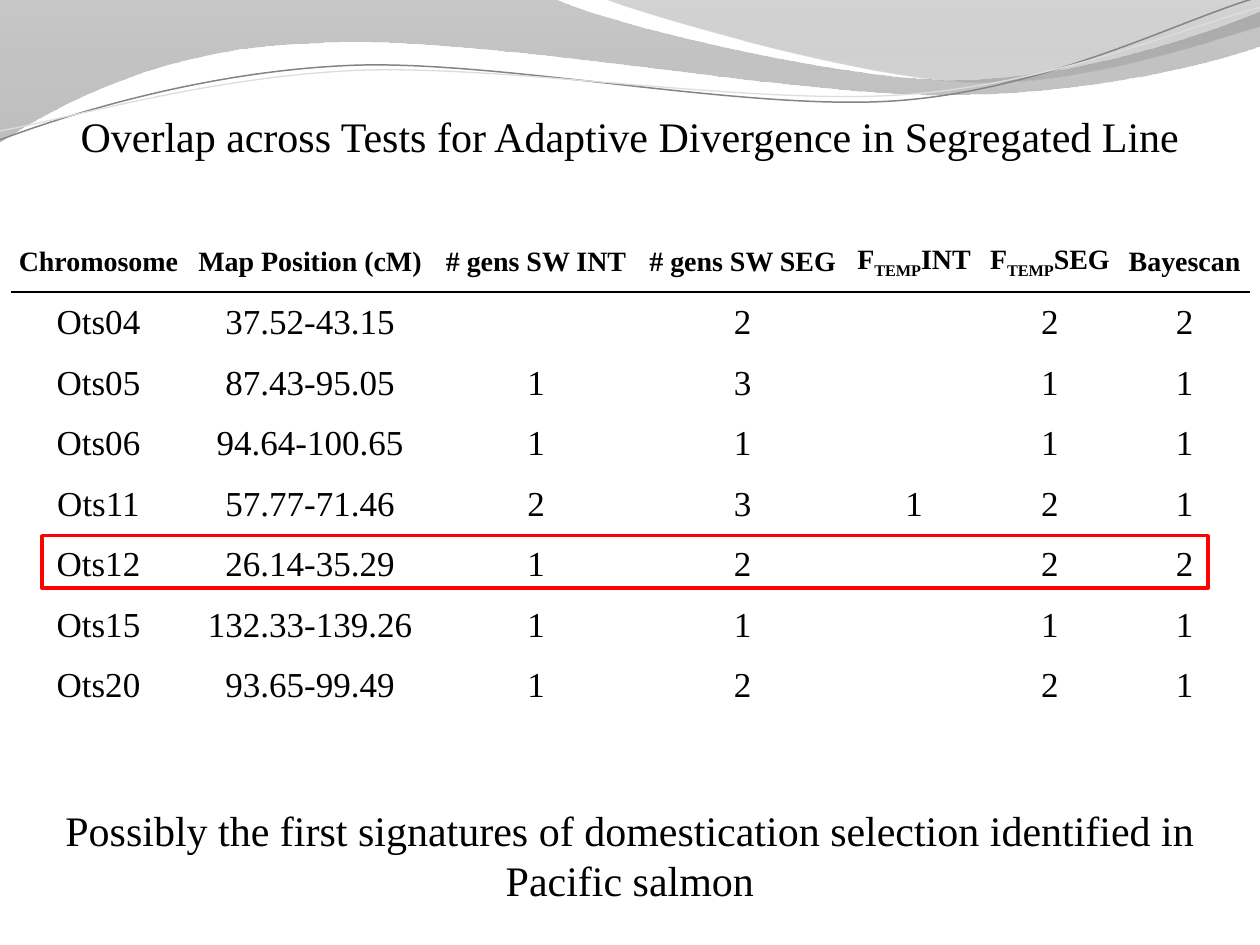
"""Build the slide on overlap across tests for adaptive divergence."""
from dataclasses import dataclass
from typing import Optional

from lxml.etree import SubElement
from pptx import Presentation
from pptx.dml.color import RGBColor
from pptx.enum.shapes import MSO_SHAPE
from pptx.enum.text import MSO_ANCHOR, MSO_AUTO_SIZE, PP_ALIGN
from pptx.oxml import parse_xml
from pptx.oxml.ns import nsdecls, qn
from pptx.util import Cm, Pt

FONT = "Times New Roman"
COLORS = {
    "text": "000000", "highlight": "FF0000",
    "wave_top": "848484", "wave_bottom": "888888",
    "crest_top": "6F6F6F", "crest_bottom": "9D9D9D",
    "dark_line": "848484", "light_line": "DDDDDD",
}
NO_STYLE = "{2D5ABB26-0587-4C30-8999-92F81FD0307C}"


@dataclass
class Stop:
    color: str
    position: float
    alpha: int


@dataclass
class Wave:
    """Outline in cm: a pair is a straight line, six numbers a Bezier curve."""
    start: tuple
    segments: list
    stops: Optional[tuple] = None
    line: Optional[str] = None
    width: float = 0


WAVES = [
    Wave((0, 0), [
        (11.18, -0.03),
        (12.09, 0.43, 16.87, 1.6, 19.25, 1.6),
        (21.67, 1.6, 24.33, 0.66, 25.4, 0.23),
        (25.43, 0.91),
        (24.97, 1.12, 22.1, 1.93, 18.95, 1.91),
        (15.8, 1.91, 9.7, 0.71, 6.53, 0.86),
        (3.28, 0.91, 1.17, 2.11, -0.03, 2.87),
    ], stops=(Stop("wave_top", 0, 45), Stop("wave_bottom", 1, 55))),
    Wave((12.17, -0.03), [
        (12.93, 0.28, 17.32, 1.57, 19.53, 1.65),
        (21.74, 1.75, 24.41, 0.81, 25.4, 0.53),
        (25.4, 0),
    ], stops=(Stop("crest_top", 0, 30), Stop("crest_bottom", 0.8, 45))),
    Wave((0, 2.82), [
        (1.22, 2.36, 4.01, 1.45, 7.04, 1.32),
        (10.03, 1.19, 15.06, 2.26, 18.11, 2.03),
        (21.16, 1.8, 23.83, 0.38, 25.35, -0.05),
    ], line="dark_line", width=0.85),
    Wave((0, 2.64), [
        (1.19, 2.44, 4.17, 1.55, 7.19, 1.42),
        (10.24, 1.3, 15.16, 2.13, 18.21, 1.91),
        (21.23, 1.7, 23.93, 0.53, 25.4, 0.15),
    ], line="light_line", width=0.75),
]

COL_WIDTHS = [3.53, 5, 4.11, 4.22, 2.69, 2.79, 2.64]
ROW_HEIGHT = 1.22
HEADER = ["Chromosome", "Map Position (cM)", "# gens SW INT", "# gens SW SEG",
          "F_TEMP_INT", "F_TEMP_SEG", "Bayescan"]
ROWS = [
    ["Ots04", "37.52-43.15", "", "2", "", "2", "2"],
    ["Ots05", "87.43-95.05", "1", "3", "", "1", "1"],
    ["Ots06", "94.64-100.65", "1", "1", "", "1", "1"],
    ["Ots11", "57.77-71.46", "2", "3", "1", "2", "1"],
    ["Ots12", "26.14-35.29", "1", "2", "", "2", "2"],
    ["Ots15", "132.33-139.26", "1", "1", "", "1", "1"],
    ["Ots20", "93.65-99.49", "1", "2", "", "2", "1"],
]


def rgb(name: str) -> RGBColor:
    return RGBColor.from_string(COLORS[name])


def bend_segments(sp, segments: list) -> None:
    lines = iter(list(sp.element.spPr.iter(qn("a:lnTo"))))
    for seg in segments:
        first = next(lines)
        if len(seg) == 6:
            first.tag = qn("a:cubicBezTo")
            for _ in range(2):
                line = next(lines)
                first.append(line[0])
                line.getparent().remove(line)


def add_wave(s, wave: Wave) -> None:
    points = [(Cm(seg[i]), Cm(seg[i + 1]))
              for seg in wave.segments for i in range(0, len(seg), 2)]
    builder = s.shapes.build_freeform(*map(Cm, wave.start))
    builder.add_line_segments(points, close=wave.stops is not None)
    sp = builder.convert_to_shape()
    bend_segments(sp, wave.segments)
    sp.shadow.inherit = False
    if wave.stops:
        sp.line.fill.background()
        sp.fill.gradient()
        sp.fill.gradient_angle = 270
        for grad_stop, stop in zip(sp.fill.gradient_stops, wave.stops):
            grad_stop.color.rgb = rgb(stop.color)
            grad_stop.position = stop.position
        colors = sp.element.spPr.iter(qn("a:srgbClr"))
        for clr, stop in zip(colors, wave.stops):
            SubElement(clr, qn("a:alpha"), val=str(stop.alpha * 1000))
    else:
        sp.fill.background()
        sp.line.color.rgb = rgb(wave.line)
        sp.line.width = Pt(wave.width)


def add_run(p, text: str, size: float, bold: bool = False, subscript: bool = False) -> None:
    r = p.add_run()
    r.text = text
    r.font.name, r.font.size, r.font.bold = FONT, Pt(size), bold
    r.font.color.rgb = rgb("text")
    if subscript:
        r._r.get_or_add_rPr().set("baseline", "-25000")


def add_bottom_border(cell) -> None:
    cell._tc.get_or_add_tcPr().insert(0, parse_xml(
        f'<a:lnB {nsdecls("a")} w="12700"><a:solidFill>'
        f'<a:srgbClr val="{COLORS["text"]}"/></a:solidFill></a:lnB>'))


def add_results(s) -> None:
    cells = [HEADER] + ROWS
    frame = s.shapes.add_table(len(cells), len(HEADER), Cm(0.22), Cm(4.67),
                               Cm(sum(COL_WIDTHS)), Cm(ROW_HEIGHT * len(cells)))
    table = frame.table
    table.first_row = table.horz_banding = False
    table._tbl.tblPr.find(qn("a:tableStyleId")).text = NO_STYLE
    for col, width in zip(table.columns, COL_WIDTHS):
        col.width = Cm(width)
    for i, values in enumerate(cells):
        table.rows[i].height = Cm(ROW_HEIGHT)
        for j, value in enumerate(values):
            cell = table.cell(i, j)
            cell.fill.background()
            cell.vertical_anchor = MSO_ANCHOR.MIDDLE
            cell.margin_left = cell.margin_right = cell.margin_top = Cm(0.02)
            cell.margin_bottom = 0
            p = cell.text_frame.paragraphs[0]
            p.alignment = PP_ALIGN.CENTER
            if value:
                for k, part in enumerate(value.split("_")):
                    add_run(p, part, 20 if i else 16, bold=i == 0, subscript=k == 1)
            if i == 0:
                add_bottom_border(cell)


def set_caption(sp, text: str, top: float, height: float) -> None:
    sp.left, sp.top, sp.width, sp.height = Cm(0), Cm(top), Cm(25.4), Cm(height)
    tf = sp.text_frame
    tf.word_wrap = True
    tf.auto_size = MSO_AUTO_SIZE.NONE
    tf.vertical_anchor = MSO_ANCHOR.TOP
    p = tf.paragraphs[0]
    p.alignment = PP_ALIGN.CENTER
    add_run(p, text, 24)


def add_highlight(s) -> None:
    sp = s.shapes.add_shape(MSO_SHAPE.RECTANGLE, Cm(0.85), Cm(10.8), Cm(23.5), Cm(1.06))
    sp.shadow.inherit = False
    sp.fill.background()
    sp.line.color.rgb = rgb("highlight")
    sp.line.width = Pt(2)


def main() -> None:
    prs = Presentation()
    prs.slide_width, prs.slide_height = Cm(25.4), Cm(19.05)
    s = prs.slides.add_slide(prs.slide_layouts[5])
    for wave in WAVES:
        add_wave(s, wave)
    add_results(s)
    title = s.shapes.title
    title.element.getparent().append(title.element)
    set_caption(title, "Overlap across Tests for Adaptive Divergence in Segregated Line", 2.11, 1.27)
    set_caption(s.shapes.add_textbox(0, 0, 0, 0),
                "Possibly the first signatures of domestication selection identified in Pacific salmon",
                16.09, 2.31)
    add_highlight(s)
    prs.save("out.pptx")


if __name__ == "__main__":
    main()
